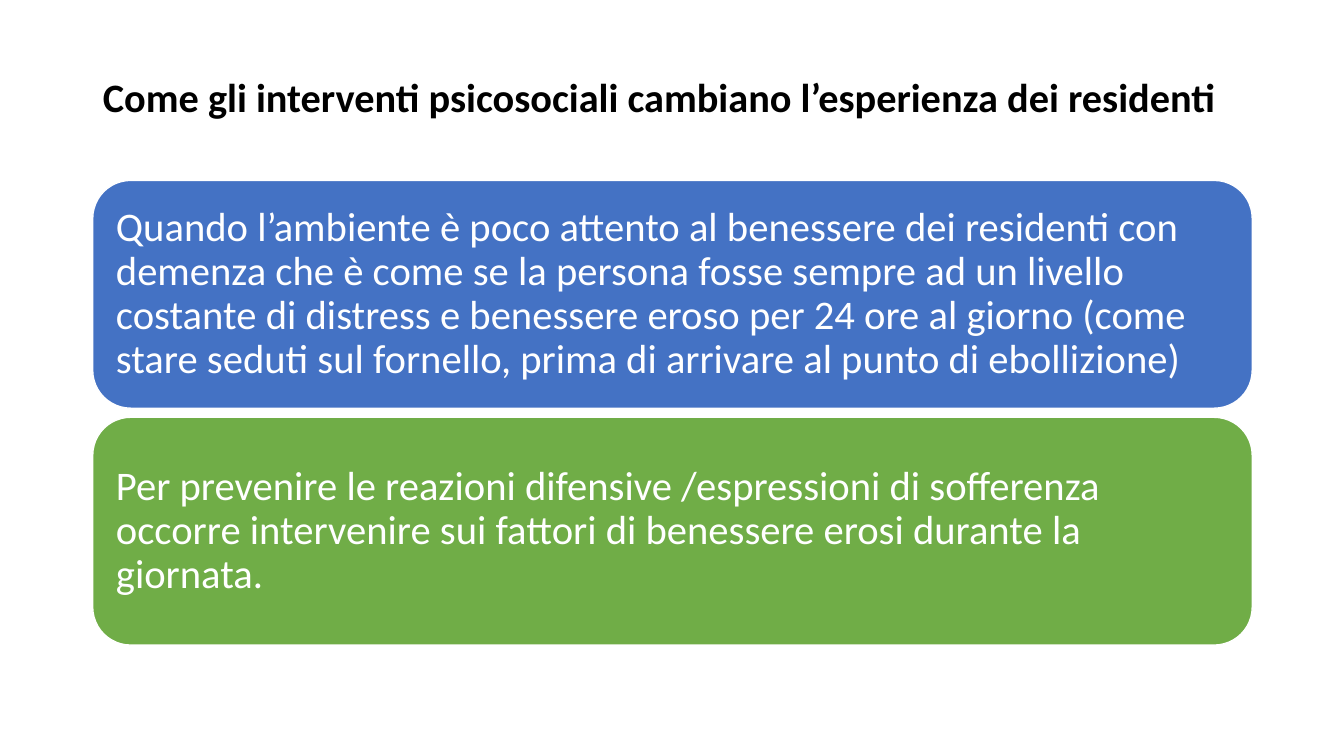
from pptx import Presentation
from pptx.dml.color import RGBColor
from pptx.enum.shapes import MSO_SHAPE
from pptx.enum.text import MSO_ANCHOR, MSO_AUTO_SIZE, PP_ALIGN
from pptx.util import Inches, Pt

COLORS = {"black": "000000", "white": "FFFFFF", "blue": "4472C4", "green": "70AD47"}
LEFT, WIDTH = Inches(0.92), Inches(11.5)


def write(tf, text, size, color, bold=False):
    """Fill a text frame with one left-aligned, vertically centred paragraph."""
    tf.word_wrap = True
    tf.auto_size = MSO_AUTO_SIZE.NONE
    tf.vertical_anchor = MSO_ANCHOR.MIDDLE
    p = tf.paragraphs[0]
    p.text = text
    p.alignment = PP_ALIGN.LEFT
    p.line_spacing = 0.9
    p.font.name = "Calibri"
    p.font.size = Pt(size)
    p.font.bold = bold
    p.font.color.rgb = RGBColor.from_string(COLORS[color])


prs = Presentation()
prs.slide_width, prs.slide_height = Inches(13.33), Inches(7.5)
s = prs.slides.add_slide(prs.slide_layouts[5])

title = s.shapes.title
title.left, title.top, title.width, title.height = LEFT, Inches(0.48), WIDTH, Inches(1.01)
write(title.text_frame,
      "Come gli interventi psicosociali cambiano l’esperienza dei residenti",
      28.8, "black", bold=True)

messages = [
    ("blue", "Quando l’ambiente è poco attento al benessere dei residenti con demenza "
             "che è come se la persona fosse sempre ad un livello costante di distress "
             "e benessere eroso per 24 ore al giorno (come stare seduti sul fornello, "
             "prima di arrivare al punto di ebollizione)"),
    ("green", "Per prevenire le reazioni difensive /espressioni di sofferenza occorre "
              "intervenire sui fattori di benessere erosi durante la giornata."),
]
for i, (color, text) in enumerate(messages):
    box = s.shapes.add_shape(MSO_SHAPE.ROUNDED_RECTANGLE, LEFT,
                             Inches(1.79 + i * 2.35), WIDTH, Inches(2.26))
    box.shadow.inherit = False
    box.fill.solid()
    box.fill.fore_color.rgb = RGBColor.from_string(COLORS[color])
    box.line.color.rgb = RGBColor.from_string(COLORS["white"])
    box.line.width = Pt(1)
    tf = box.text_frame
    tf.margin_left = tf.margin_right = tf.margin_top = tf.margin_bottom = Inches(0.12)
    write(tf, text, 29, "white")

prs.save("out.pptx")
